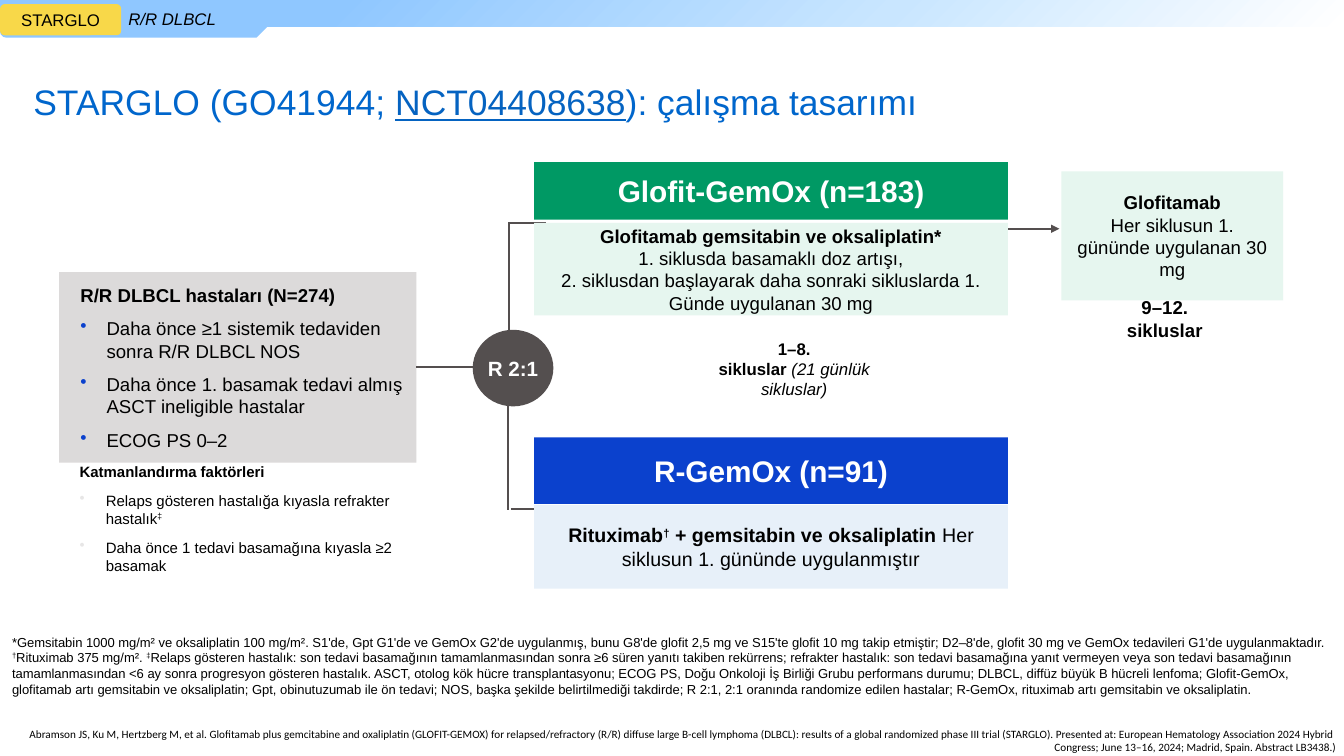
from dataclasses import dataclass
from typing import NamedTuple, Optional

import lxml.etree
import pptx
import pptx.dml.color
import pptx.enum.shapes
import pptx.enum.text
import pptx.oxml.ns
import pptx.util

Pt = pptx.util.Pt
qn = pptx.oxml.ns.qn
Preset = pptx.enum.shapes.MSO_SHAPE
Align = pptx.enum.text.PP_ALIGN
Anchor = pptx.enum.text.MSO_ANCHOR


@dataclass(frozen=True)
class Theme:
    font: str = "Arial"
    reference_font: str = "Calibri"
    black: str = "000000"
    white: str = "FFFFFF"
    title: str = "0066CC"
    trial_id: str = "0563C1"
    band: str = "8FC7FF"
    band_mid: str = "C9E6FF"
    tag: str = "F8D849"
    dark: str = "544F4F"
    grey: str = "DCDADA"
    faint: str = "E7E6E6"
    green: str = "009964"
    pale_green: str = "E6F6EF"
    blue: str = "0B41CD"
    pale_blue: str = "E7F0F9"
    title_size: float = 25.3
    arm_size: float = 21.3
    ratio_size: float = 14.7
    control_size: float = 14
    body_size: float = 13.3
    label_size: float = 12
    strata_size: float = 10.7
    footnote_size: float = 9.3
    reference_size: float = 8
    line_width: float = 1.5


THEME = Theme()


class Run(NamedTuple):
    text: str
    bold: bool = False
    italic: bool = False
    raised: bool = False
    underline: bool = False
    color: Optional[str] = None


class Para(NamedTuple):
    runs: list[Run]
    bullet: Optional[str] = None


class Frame(NamedTuple):
    left: float
    top: float
    width: float
    height: float


class Margins(NamedTuple):
    left: float = 0
    top: float = 0
    right: float = 0
    bottom: float = 0


class Segment(NamedTuple):
    x1: float
    y1: float
    x2: float
    y2: float
    arrow: bool = False


PADDED = Margins(9.6, 4.8, 9.6, 4.8)
SIDES = Margins(9.6, 0, 9.6, 0)


@dataclass(frozen=True)
class Block:
    frame: Frame
    paras: list[Para]
    size: float
    fill: Optional[str] = None
    preset: Preset = Preset.RECTANGLE
    color: str = THEME.black
    margins: Margins = Margins()
    align: Align = Align.CENTER
    anchor: Anchor = Anchor.MIDDLE
    font: str = THEME.font
    corner: Optional[float] = None


def rgb(color: str) -> pptx.dml.color.RGBColor:
    return pptx.dml.color.RGBColor.from_string(color)


def add_bullet(paragraph, color: str) -> None:
    paragraph.space_before = Pt(8)
    properties = paragraph._p.get_or_add_pPr()
    properties.set("marL", str(Pt(18.7)))
    properties.set("indent", str(-Pt(18.7)))
    bullet_color = lxml.etree.SubElement(properties, qn("a:buClr"))
    lxml.etree.SubElement(bullet_color, qn("a:srgbClr"), val=color)
    lxml.etree.SubElement(properties, qn("a:buChar"), char="•")


def write_text(frame, block: Block) -> None:
    frame.word_wrap = True
    frame.vertical_anchor = block.anchor
    frame.margin_left, frame.margin_top, frame.margin_right, frame.margin_bottom = map(Pt, block.margins)
    for index, para in enumerate(block.paras):
        paragraph = frame.add_paragraph() if index else frame.paragraphs[0]
        paragraph.alignment = block.align
        if para.bullet:
            add_bullet(paragraph, para.bullet)
        for part in para.runs:
            run = paragraph.add_run()
            run.text = part.text
            run.font.name, run.font.size = block.font, Pt(block.size)
            run.font.bold, run.font.italic = part.bold, part.italic
            run.font.underline = part.underline
            run.font.color.rgb = rgb(part.color or block.color)
            if part.raised:
                run._r.get_or_add_rPr().set("baseline", "30000")


def add_plain_shape(slide, preset: Preset, frame: Frame, fill: str):
    shape = slide.shapes.add_shape(preset, *map(Pt, frame))
    shape.shadow.inherit = False
    shape.fill.solid()
    shape.fill.fore_color.rgb = rgb(fill)
    shape.line.fill.background()
    return shape


def add_block(slide, block: Block):
    if block.fill:
        shape = add_plain_shape(slide, block.preset, block.frame, block.fill)
    else:
        shape = slide.shapes.add_textbox(*map(Pt, block.frame))
    if block.corner is not None:
        shape.adjustments[0] = block.corner
    write_text(shape.text_frame, block)
    return shape


def add_segment(slide, segment: Segment):
    connector = slide.shapes.add_connector(
        pptx.enum.shapes.MSO_CONNECTOR.STRAIGHT, *map(Pt, segment[:4]))
    connector.line.color.rgb = rgb(THEME.dark)
    connector.line.width = Pt(THEME.line_width)
    properties = connector.element.spPr
    if segment.arrow:
        lxml.etree.SubElement(properties.find(qn("a:ln")), qn("a:tailEnd"), type="triangle")
    lxml.etree.SubElement(properties, qn("a:effectLst"))
    return connector


def add_header(slide) -> None:
    """Draw the fading top band and the tab hanging from it."""
    band = add_plain_shape(slide, Preset.RECTANGLE, Frame(0, 0, 960, 18.9), THEME.band)
    gradient = lxml.etree.Element(qn("a:gradFill"), rotWithShape="1")
    stops = lxml.etree.SubElement(gradient, qn("a:gsLst"))
    for percent, color in ((0, THEME.band), (25, THEME.band), (66, THEME.band_mid), (100, THEME.white)):
        stop = lxml.etree.SubElement(stops, qn("a:gs"), pos=str(percent * 1000))
        lxml.etree.SubElement(stop, qn("a:srgbClr"), val=color)
    radial = lxml.etree.SubElement(gradient, qn("a:path"), path="circle")
    lxml.etree.SubElement(radial, qn("a:fillToRect"), r="100000", b="100000")
    properties = band.element.spPr
    properties.replace(properties.find(qn("a:solidFill")), gradient)

    tab = add_plain_shape(slide, Preset.SNIP_ROUND_RECTANGLE, Frame(0, 0, 196.6, 26.9), THEME.band)
    tab.adjustments[0], tab.adjustments[1] = 0.167, 0.5
    tab.rotation = 180
    tab.element.spPr.xfrm.set("flipH", "1")


def arm_block(top: float, height: float, paras: list[Para], size: float, fill: str,
              color: str = THEME.black) -> Block:
    return Block(Frame(381.6, top, 338.4, height), paras, size, fill, color=color, margins=SIDES)


TITLE = Block(Frame(23.8, 41.8, 835.9, 65.5), [Para([
    Run("STARGLO (GO41944; "), Run("NCT04408638", underline=True, color=THEME.trial_id),
    Run("): çalışma tasarımı")])], THEME.title_size, color=THEME.title,
    margins=Margins(0, 4.8, 9.6, 4.8), align=Align.LEFT)
PATIENTS = Block(Frame(42.3, 194.4, 255.1, 136.1), [
    Para([Run("R/R DLBCL hastaları (N=274)", bold=True)]),
    *(Para([Run(criterion)], THEME.blue) for criterion in (
        "Daha önce ≥1 sistemik tedaviden sonra R/R DLBCL NOS",
        "Daha önce 1. basamak tedavi almış ASCT ineligible hastalar",
        "ECOG PS 0–2"))],
    THEME.body_size, THEME.grey, margins=Margins(15.1, 4.8, 3.6, 4.8), align=Align.LEFT)
BRANCHES = [
    Segment(365, 363.6, 391, 363.6), Segment(364.3, 159.1, 390.2, 159.1),
    Segment(363.6, 235.4, 363.6, 158.4), Segment(362.9, 288, 362.9, 364.3),
    Segment(707.8, 163.4, 756.7, 163.4, arrow=True)]
BLOCKS = [
    Block(Frame(82.1, 1.4, 86.4, 24.5), [Para([Run("R/R DLBCL", italic=True)])],
          THEME.label_size, margins=PADDED, align=Align.LEFT),
    Block(Frame(0, 2.9, 86.6, 22.3), [Para([Run("STARGLO")])], THEME.label_size, THEME.tag,
          Preset.ROUNDED_RECTANGLE, margins=SIDES, corner=0.15),
    Block(Frame(337.7, 235.6, 57.6, 54.7), [Para([Run("R 2:1", bold=True)])], THEME.ratio_size,
          THEME.dark, Preset.OVAL, color=THEME.white),
    arm_block(159.1, 66.2, [
        Para([Run("Glofitamab gemsitabin ve oksaliplatin*", bold=True)]),
        Para([Run("1. siklusda basamaklı doz artışı,")]),
        Para([Run("2. siklusdan başlayarak daha sonraki sikluslarda 1. Günde uygulanan 30 mg")])],
        THEME.body_size, THEME.pale_green),
    arm_block(360.7, 59.8, [Para([
        Run("Rituximab", bold=True), Run("†", bold=True, raised=True),
        Run(" + gemsitabin ve oksaliplatin ", bold=True),
        Run("Her siklusun 1. gününde uygulanmıştır")])], THEME.control_size, THEME.pale_blue),
    arm_block(115.9, 41, [Para([Run("Glofit-GemOx (n=183)", bold=True)])],
              THEME.arm_size, THEME.green, THEME.white),
    arm_block(312.5, 47.5, [Para([Run("R-GemOx (n=91)", bold=True)])],
              THEME.arm_size, THEME.blue, THEME.white),
    Block(Frame(758.2, 122.4, 158.4, 92.2), [
        Para([Run("Glofitamab", bold=True)]),
        Para([Run("Her siklusun 1. gününde uygulanan 30 mg")])],
        THEME.body_size, THEME.pale_green, margins=PADDED),
    Block(Frame(504, 247, 126.7, 32.4), [
        Para([Run("1–8.", bold=True)]),
        Para([Run("sikluslar ", bold=True), Run("(21 günlük sikluslar)", italic=True)])],
        THEME.label_size),
    Block(Frame(787, 219.6, 90, 15.8), [Para([Run("9–12. sikluslar", bold=True)])], THEME.body_size),
    Block(Frame(56.9, 337.7, 236.9, 64.8), [
        Para([Run("Katmanlandırma faktörleri", bold=True)]),
        Para([Run("Relaps gösteren hastalığa kıyasla refrakter hastalık"), Run("‡", raised=True)],
             THEME.faint),
        Para([Run("Daha önce 1 tedavi basamağına kıyasla ≥2 basamak")], THEME.faint)],
        THEME.strata_size, align=Align.LEFT),
    Block(Frame(8.6, 445, 951.4, 52.6), [Para([
        Run("*Gemsitabin 1000 mg/m² ve oksaliplatin 100 mg/m². S1'de, Gpt G1'de ve GemOx G2'de uygulanmış, bunu G8'de glofit 2,5 mg ve S15'te glofit 10 mg takip etmiştir; D2–8'de, glofit 30 mg ve GemOx tedavileri G1'de uygulanmaktadır. "),
        Run("†", raised=True), Run("Rituximab 375 mg/m². "), Run("‡", raised=True),
        Run("Relaps gösteren hastalık: son tedavi basamağının tamamlanmasından sonra ≥6 süren yanıtı takiben rekürrens; refrakter hastalık: son tedavi basamağına yanıt vermeyen veya son tedavi basamağının tamamlanmasından <6 ay sonra progresyon gösteren hastalık. ASCT, otolog kök hücre transplantasyonu; ECOG PS, Doğu Onkoloji İş Birliği Grubu performans durumu; DLBCL, diffüz büyük B hücreli lenfoma; Glofit-GemOx, glofitamab artı gemsitabin ve oksaliplatin; Gpt, obinutuzumab ile ön tedavi; NOS, başka şekilde belirtilmediği takdirde; R 2:1, 2:1 oranında randomize edilen hastalar; R-GemOx, rituximab artı gemsitabin ve oksaliplatin.")])],
        THEME.footnote_size, align=Align.LEFT, anchor=Anchor.BOTTOM),
    Block(Frame(0, 510.5, 954.7, 28.1), [Para([Run("Abramson JS, Ku M, Hertzberg M, et al. Glofitamab plus gemcitabine and oxaliplatin (GLOFIT-GEMOX) for relapsed/refractory (R/R) diffuse large B-cell lymphoma (DLBCL): results of a global randomized phase III trial (STARGLO). Presented at: European Hematology Association 2024 Hybrid Congress; June 13–16, 2024; Madrid, Spain. Abstract LB3438.)")])],
        THEME.reference_size, align=Align.RIGHT, anchor=Anchor.BOTTOM, font=THEME.reference_font),
]


def main() -> None:
    deck = pptx.Presentation()
    deck.slide_width, deck.slide_height = Pt(960), Pt(540)
    slide = deck.slides.add_slide(deck.slide_layouts[5])
    title = slide.shapes.title
    title.left, title.top, title.width, title.height = map(Pt, TITLE.frame)
    write_text(title.text_frame, TITLE)
    title.text_frame.paragraphs[0].line_spacing = 0.9

    add_header(slide)
    patients = add_block(slide, PATIENTS)
    to_randomisation = add_segment(slide, Segment(297.4, 262.45, 350, 262.45))
    to_randomisation.begin_connect(patients, 3)
    for branch in BRANCHES:
        add_segment(slide, branch)
    for block in BLOCKS:
        add_block(slide, block)
    deck.save("out.pptx")


if __name__ == "__main__":
    main()
